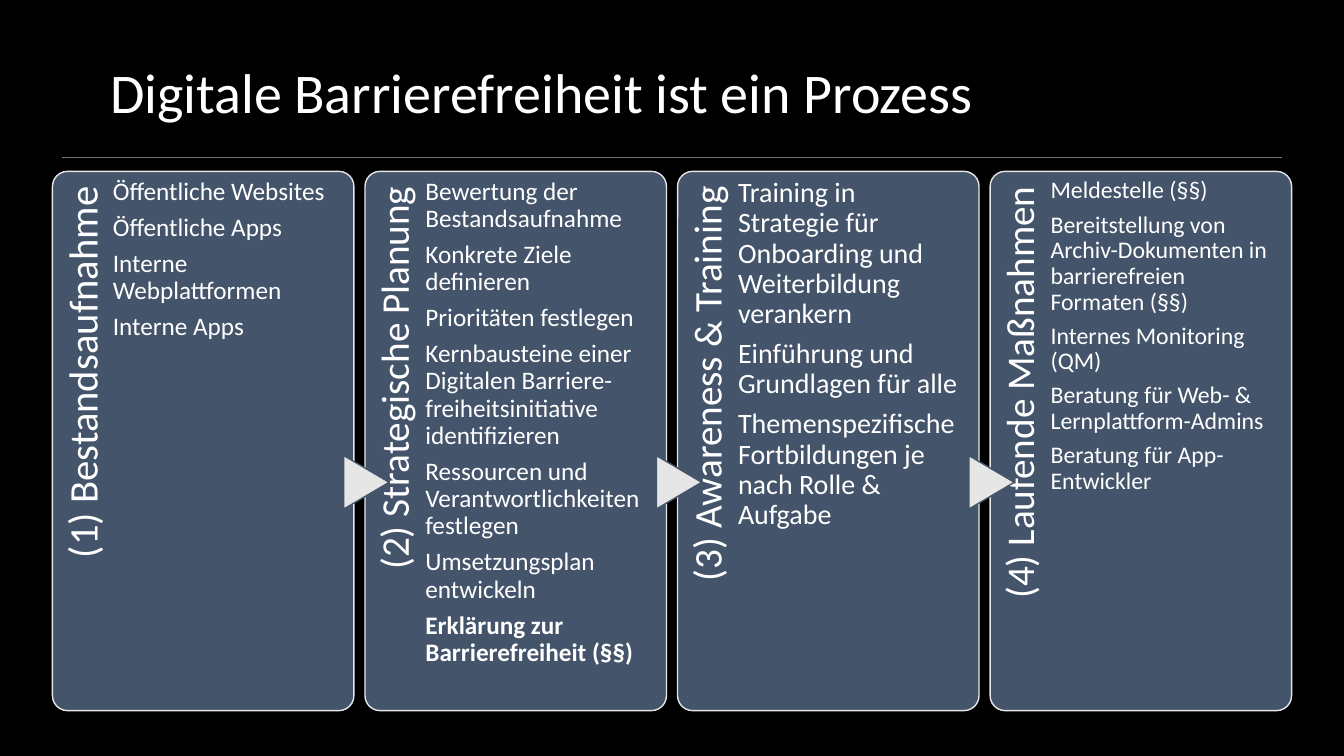
from pptx import Presentation
from pptx.dml.color import RGBColor
from pptx.enum.shapes import MSO_CONNECTOR, MSO_SHAPE
from pptx.enum.text import MSO_ANCHOR, MSO_AUTO_SIZE, PP_ALIGN
from pptx.oxml.ns import qn
from pptx.util import Inches, Pt
from lxml import etree

BLACK = RGBColor(0x00, 0x00, 0x00)
WHITE = RGBColor(0xFF, 0xFF, 0xFF)
GREY = RGBColor(0x76, 0x71, 0x71)
SLATE = RGBColor(0x44, 0x54, 0x6A)
LIGHT = RGBColor(0xE7, 0xE6, 0xE6)

PANEL_TOP, PANEL_WIDTH, PANEL_HEIGHT = 1.7, 2.99, 5.35
FIRST_LEFT, PITCH = 0.52, 3.1

STEPS = [
    ("(1) Bestandsaufnahme", 29, 18, [
        "Öffentliche Websites",
        "Öffentliche Apps",
        "Interne Webplattformen",
        "Interne Apps",
    ]),
    ("(2) Strategische Planung", 28, 18, [
        "Bewertung der Bestandsaufnahme",
        "Konkrete Ziele definieren",
        "Prioritäten festlegen",
        "Kernbausteine einer Digitalen Barriere-freiheitsinitiative identifizieren",
        "Ressourcen und Verantwortlichkeiten festlegen",
        "Umsetzungsplan entwickeln",
        "Erklärung zur Barrierefreiheit (§§)",
    ]),
    ("(3) Awareness & Training", 28, 20, [
        "Training in Strategie für Onboarding und Weiterbildung verankern",
        "Einführung und Grundlagen für alle",
        "Themenspezifische Fortbildungen je nach Rolle & Aufgabe",
    ]),
    ("(4) Laufende Maßnahmen", 28, 17, [
        "Meldestelle (§§)",
        "Bereitstellung von Archiv-Dokumenten in barrierefreien Formaten (§§)",
        "Internes Monitoring (QM)",
        "Beratung für Web- & Lernplattform-Admins",
        "Beratung für App-Entwickler",
    ]),
]
BOLD_ITEM = "Erklärung zur Barrierefreiheit (§§)"


def write_text(box, lines, size, align=PP_ALIGN.LEFT, anchor=MSO_ANCHOR.TOP,
               insets=(0.1, 0.05, 0.1, 0.05), gap=0.35):
    frame = box.text_frame
    frame.word_wrap = True
    frame.auto_size = MSO_AUTO_SIZE.NONE
    frame.vertical_anchor = anchor
    (frame.margin_left, frame.margin_top,
     frame.margin_right, frame.margin_bottom) = map(Inches, insets)
    for index, line in enumerate(lines):
        para = frame.add_paragraph() if index else frame.paragraphs[0]
        para.alignment = align
        para.line_spacing = 0.9
        para.space_before = Pt(0)
        para.space_after = Pt(size * gap)
        span = para.add_run()
        span.text = line
        span.font.name = "Calibri"
        span.font.size = Pt(size)
        span.font.bold = line == BOLD_ITEM
        span.font.color.rgb = WHITE


def add_filled(page, preset, left, top, width, height, fill, line):
    shape = page.shapes.add_shape(
        preset, Inches(left), Inches(top), Inches(width), Inches(height))
    shape.shadow.inherit = False
    shape.fill.solid()
    shape.fill.fore_color.rgb = fill
    shape.line.color.rgb = line
    shape.line.width = Pt(1)
    return shape


deck = Presentation()
deck.slide_width, deck.slide_height = Inches(13.33), Inches(7.5)
page = deck.slides.add_slide(deck.slide_layouts[5])
page.background.fill.solid()
page.background.fill.fore_color.rgb = BLACK

rule = page.shapes.add_connector(
    MSO_CONNECTOR.STRAIGHT, Inches(0.62), Inches(1.56), Inches(12.72), Inches(1.56))
rule.line.color.rgb = GREY
rule.line.width = Pt(0.5)
etree.SubElement(rule._element.spPr, qn("a:effectLst"))

title = page.shapes.title
title.left, title.top = Inches(0.62), Inches(0.4)
title.width, title.height = Inches(9.5), Inches(1.1)
write_text(title, ["Digitale Barrierefreiheit ist ein Prozess"], 40,
           align=PP_ALIGN.CENTER, anchor=MSO_ANCHOR.MIDDLE, gap=0)

for number, (heading, heading_size, item_size, items) in enumerate(STEPS):
    left = FIRST_LEFT + number * PITCH
    panel = add_filled(page, MSO_SHAPE.ROUNDED_RECTANGLE, left, PANEL_TOP,
                       PANEL_WIDTH, PANEL_HEIGHT, SLATE, LIGHT)
    panel.adjustments[0] = 0.05

    heading_box = page.shapes.add_textbox(
        Inches(left - 1.89), Inches(3.6), Inches(4.38), Inches(0.6))
    heading_box.rotation = 270
    write_text(heading_box, [heading], heading_size, align=PP_ALIGN.RIGHT,
               insets=(0, 0.1, 0.14, 0))

    if number:
        arrow = add_filled(page, MSO_SHAPE.FLOWCHART_EXTRACT, left - 0.25, 4.56,
                           0.53, 0.45, LIGHT, SLATE)
        arrow.rotation = 90

    item_box = page.shapes.add_textbox(
        Inches(left + 0.6), Inches(PANEL_TOP), Inches(2.23), Inches(PANEL_HEIGHT))
    write_text(item_box, items, item_size, insets=(0, 0.07, 0, 0))

deck.save("out.pptx")
